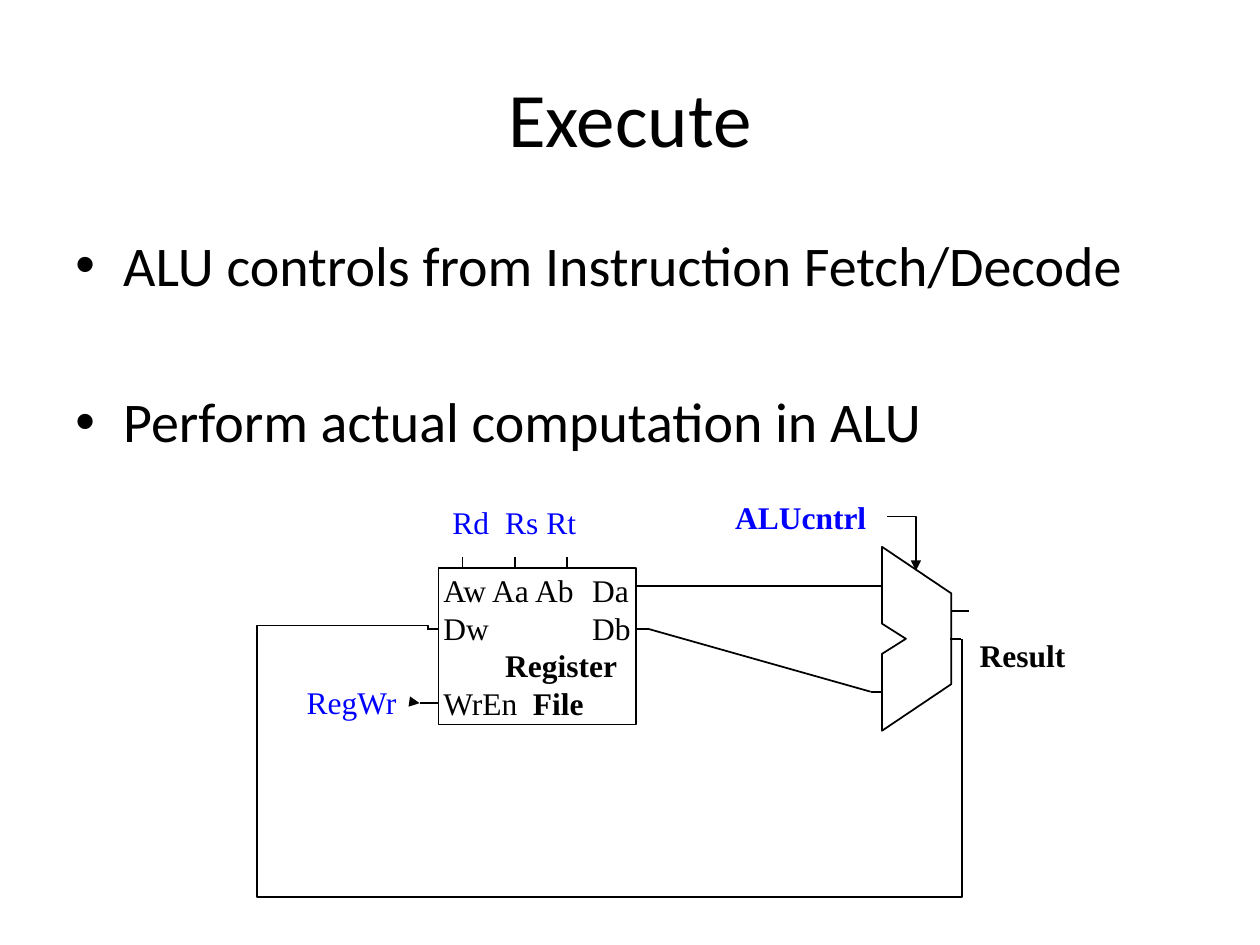
from typing import NamedTuple

from lxml.etree import SubElement as Sub
from pptx import Presentation
from pptx.dml.color import RGBColor as Rgb
from pptx.enum.shapes import MSO_CONNECTOR as Conn, MSO_SHAPE as Form
from pptx.enum.text import MSO_ANCHOR as Anchor, MSO_AUTO_SIZE as Auto, PP_ALIGN as Align
from pptx.oxml.ns import qn
from pptx.util import Emu, Pt

PX = 9144
COLORS = {"ink": "000000", "paper": "FFFFFF", "signal": "0000FF"}
SERIF, SANS = "Times New Roman", "Calibri"


class Label(NamedTuple):
    text: str
    x: int
    y: int
    w: int
    color: str
    bold: bool = False
    tab: int = 0


class Wire(NamedTuple):
    x1: int
    y1: int
    x2: int
    y2: int
    arrow: bool = False


class Bend(NamedTuple):
    wire: Wire
    kind: str
    adjust: tuple = ()
    turn: int = 0
    flip: bool = False


class Row(NamedTuple):
    plain: str
    tab: int
    bold: str = ""


LABELS = [
    Label("ALUcntrl", 573, 390, 125, "signal", True),
    Label("RegWr", 233, 537, 92, "signal"),
    Label("Rd\tRs Rt", 347, 394, 123, "signal", tab=42),
    Label("Result", 767, 500, 89, "ink", True),
]
ROWS = [
    Row("Aw Aa Ab\tDa", 118),
    Row("Dw\tDb", 118),
    Row("\t", 49, "Register"),
    Row("WrEn\t", 71, "File"),
]
ALU = [(700, 434), (755, 471), (755, 543), (700, 580),
       (700, 519), (719, 507), (700, 495)]
WIRES = [
    *(Wire(x, 451, x, 442) for x in (367, 409, 450)),
    *(Wire(505, y, 514, y) for y in (465, 499)),
    *(Wire(691, y, 700, y) for y in (465, 549)),
    Wire(339, 499, 348, 499),
    Wire(333, 558, 348, 558),
    Wire(754, 507, 763, 507),
    Wire(755, 485, 769, 485),
    Wire(326, 557, 333, 558, True),
    Wire(514, 465, 691, 465),
    Wire(514, 499, 691, 549),
]
BENDS = [
    Bend(Wire(704, 410, 727, 453, True), "bentConnector2"),
    Bend(Wire(547, 291, 556, 715), "bentConnector5",
         (-2267000, 131900, 122200), 270, True),
]


def px(*values: int) -> list[Emu]:
    return [Emu(v * PX) for v in values]


def tint(name: str) -> Rgb:
    return Rgb.from_string(COLORS[name])


def style(para, font: str, size: int, color: str, bold: bool = False) -> None:
    para.font.name = font
    para.font.size = Pt(size)
    para.font.bold = bold
    para.font.color.rgb = tint(color)


def set_tab(para, pos: int) -> None:
    stops = Sub(para._p.get_or_add_pPr(), qn("a:tabLst"))
    Sub(stops, qn("a:tab"), pos=str(pos * PX), algn="l")


def paint(shape) -> None:
    shape.shadow.inherit = False
    shape.fill.solid()
    shape.fill.fore_color.rgb = tint("paper")
    shape.line.color.rgb = tint("ink")
    shape.line.width = Pt(1)


def draw_wire(slide, wire: Wire, kind=Conn.STRAIGHT):
    conn = slide.shapes.add_connector(kind, *px(*wire[:4]))
    conn.line.color.rgb = tint("ink")
    conn.line.width = Pt(1)
    props = conn.element.spPr
    if wire.arrow:
        Sub(conn.line._get_or_add_ln(), qn("a:tailEnd"), type="triangle")
    Sub(props, qn("a:effectLst"))
    return props


def draw_bend(slide, bend: Bend) -> None:
    props = draw_wire(slide, bend.wire, Conn.ELBOW)
    geom = props.find(qn("a:prstGeom"))
    geom.set("prst", bend.kind)
    guides = geom.find(qn("a:avLst"))
    for i, value in enumerate(bend.adjust, 1):
        Sub(guides, qn("a:gd"), name=f"adj{i}", fmla=f"val {value}")
    frame = props.find(qn("a:xfrm"))
    if bend.turn:
        frame.set("rot", str(bend.turn * 60000))
    if bend.flip:
        frame.set("flipV", "1")


def draw_label(slide, label: Label) -> None:
    frame = slide.shapes.add_textbox(*px(label.x, label.y, label.w, 40)).text_frame
    frame.word_wrap = bool(label.tab)
    frame.auto_size = Auto.SHAPE_TO_FIT_TEXT
    para = frame.paragraphs[0]
    para.text = label.text
    para.alignment = Align.LEFT if label.tab else Align.CENTER
    style(para, SERIF, 18, label.color, label.bold)
    if label.tab:
        frame.margin_left = Emu(12 * PX)
        set_tab(para, label.tab)


def draw_file(slide) -> None:
    box = slide.shapes.add_shape(Form.RECTANGLE, *px(348, 451, 157, 124))
    paint(box)
    frame = box.text_frame
    frame.word_wrap = True
    frame.vertical_anchor = Anchor.MIDDLE
    frame.margin_left, frame.margin_right = px(4, 0)
    for i, row in enumerate(ROWS):
        para = frame.add_paragraph() if i else frame.paragraphs[0]
        para.alignment = Align.LEFT
        style(para, SERIF, 18, "ink")
        set_tab(para, row.tab)
        para.add_run().text = row.plain
        if row.bold:
            run = para.add_run()
            run.text = row.bold
            run.font.bold = True


def draw_alu(slide) -> None:
    pen = slide.shapes.build_freeform(*ALU[0], scale=float(PX))
    pen.add_line_segments(ALU[1:], close=True)
    paint(pen.convert_to_shape())


def draw_title(slide, text: str) -> None:
    frame = slide.shapes.add_textbox(*px(50, 30, 900, 125)).text_frame
    frame.word_wrap = True
    frame.vertical_anchor = Anchor.MIDDLE
    para = frame.paragraphs[0]
    para.text = text
    para.alignment = Align.CENTER
    style(para, SANS, 44, "ink")


def draw_body(slide, lines: list[str]) -> None:
    frame = slide.shapes.add_textbox(*px(50, 175, 900, 217)).text_frame
    frame.word_wrap = True
    frame.margin_top = Emu(8 * PX)
    for i, text in enumerate(lines):
        para = frame.add_paragraph() if i else frame.paragraphs[0]
        para.text = text
        para.space_before = Pt(51 if i else 0)
        style(para, SANS, 32, "ink")
        props = para._p.get_or_add_pPr()
        props.set("marL", str(38 * PX))
        props.set("indent", str(-38 * PX))
        mark = props.find(qn("a:defRPr"))
        font = props.makeelement(qn("a:buFont"), {"typeface": "Arial"})
        dot = props.makeelement(qn("a:buChar"), {"char": "•"})
        for item in (font, dot):
            if mark is None:
                props.append(item)
            else:
                mark.addprevious(item)


def main() -> None:
    deck = Presentation()
    deck.slide_width, deck.slide_height = px(1000, 750)
    slide = deck.slides.add_slide(deck.slide_layouts[6])
    draw_title(slide, "Execute")
    draw_body(slide, ["ALU controls from Instruction Fetch/Decode",
                      "Perform actual computation in ALU"])
    draw_alu(slide)
    draw_file(slide)
    for wire in WIRES:
        draw_wire(slide, wire)
    for bend in BENDS:
        draw_bend(slide, bend)
    for label in LABELS:
        draw_label(slide, label)
    deck.save("out.pptx")


if __name__ == "__main__":
    main()
